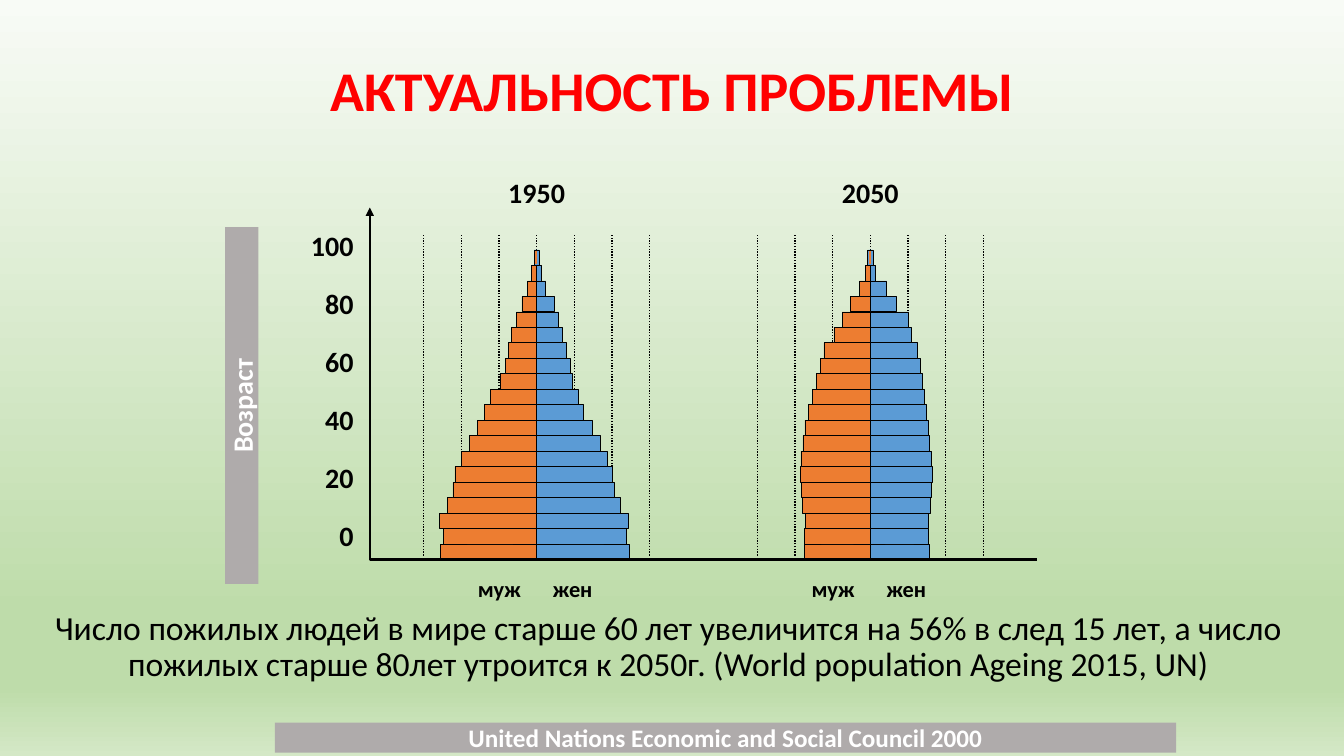
from lxml.etree import SubElement
from pptx import Presentation
from pptx.dml.color import RGBColor
from pptx.enum.dml import MSO_LINE
from pptx.enum.shapes import MSO_CONNECTOR, MSO_SHAPE
from pptx.enum.text import MSO_ANCHOR, PP_ALIGN
from pptx.oxml.ns import qn
from pptx.util import Cm, Pt

TITLE = "АКТУАЛЬНОСТЬ ПРОБЛЕМЫ"
SUMMARY = ("Число пожилых людей в мире старше 60 лет увеличится на 56% в след 15 лет, "
           "а число пожилых старше 80лет утроится к 2050г. "
           "(World population Ageing 2015, UN)")
SOURCE = "United Nations Economic and Social Council 2000"
AGE_AXIS = "Возраст"
AGES = ["100", "80", "60", "40", "20", "0"]
MEN, WOMEN = "муж", "жен"
PYRAMIDS = [
    {"year": "1950",
     "men": [2.43, 2.34, 2.44, 2.24, 2.11, 2.06, 1.9, 1.7, 1.5, 1.32,
             1.17, 0.91, 0.79, 0.71, 0.64, 0.51, 0.37, 0.23, 0.13],
     "women": [2.34, 2.26, 2.31, 2.11, 1.96, 1.9, 1.78, 1.6, 1.4, 1.19,
               1.04, 0.91, 0.84, 0.74, 0.66, 0.56, 0.45, 0.23, 0.13]},
    {"year": "2050",
     "men": [1.66, 1.67, 1.64, 1.71, 1.74, 1.76, 1.75, 1.7, 1.65, 1.57,
             1.45, 1.37, 1.25, 1.17, 0.92, 0.71, 0.51, 0.28, 0.13],
     "women": [1.5, 1.47, 1.47, 1.52, 1.55, 1.57, 1.55, 1.5, 1.47, 1.42,
               1.37, 1.32, 1.27, 1.19, 1.04, 0.97, 0.66, 0.41, 0.13]},
]
BACKGROUND = [(0, "F8FBF6"), (81, "BEDCAA"), (91, "BEDCAA"), (100, "D4E8C6")]

BLACK = RGBColor(0x00, 0x00, 0x00)
WHITE = RGBColor(0xFF, 0xFF, 0xFF)
RED = RGBColor(0xFF, 0x00, 0x00)
GRAY = RGBColor(0xAF, 0xAB, 0xAB)
ORANGE = RGBColor(0xED, 0x7D, 0x31)
BLUE = RGBColor(0x5B, 0x9B, 0xD5)

AXIS_LEFT, AXIS_TOP, AXIS_BOTTOM = 9.32, 5.23, 14.1
PANEL_WIDTH = 8.41
BAR_HEIGHT = 0.39
TIP_WIDTH = 0.13
GRID_STEP, GRID_TOP, GRID_BOTTOM = 0.95, 5.92, 14

prs = Presentation()
prs.slide_width, prs.slide_height = Cm(33.87), Cm(19.05)
slide = prs.slides.add_slide(prs.slide_layouts[6])
shapes = slide.shapes


def paint_background():
    fill = slide.background.fill
    fill.gradient()
    fill.gradient_angle = 270
    stops = next(slide.element.iter(qn("a:gsLst")))
    for stop in list(stops):
        stops.remove(stop)
    for percent, color in BACKGROUND:
        stop = SubElement(stops, qn("a:gs"), pos=str(percent * 1000))
        SubElement(stop, qn("a:srgbClr"), val=color)


def write(shape, lines, size, color=BLACK, bold=True, align=PP_ALIGN.CENTER,
          anchor=MSO_ANCHOR.TOP, insets=(0, 0), spacing=None, gap=0):
    frame = shape.text_frame
    frame.word_wrap = True
    frame.vertical_anchor = anchor
    frame.margin_left = frame.margin_right = Cm(insets[0])
    frame.margin_top = frame.margin_bottom = Cm(insets[1])
    for index, line in enumerate(lines):
        paragraph = frame.add_paragraph() if index else frame.paragraphs[0]
        paragraph.alignment = align
        paragraph.line_spacing = spacing
        paragraph.space_before = Pt(gap if index else 0)
        run = paragraph.add_run()
        run.text = line
        run.font.name, run.font.size, run.font.bold = "Calibri", Pt(size), bold
        run.font.color.rgb = color


def text_box(left, top, width, height, lines, size, **style):
    write(shapes.add_textbox(Cm(left), Cm(top), Cm(width), Cm(height)), lines, size, **style)


def rectangle(left, top, width, height, color, outlined=False):
    shape = shapes.add_shape(MSO_SHAPE.RECTANGLE, Cm(left), Cm(top), Cm(width), Cm(height))
    shape.shadow.inherit = False
    shape.fill.solid()
    shape.fill.fore_color.rgb = color
    if outlined:
        shape.line.color.rgb = BLACK
        shape.line.width = Pt(0.5)
    else:
        shape.line.fill.background()
    return shape


def vertical_line(x, top, bottom, color, width, dash=None):
    line = shapes.add_connector(MSO_CONNECTOR.STRAIGHT, Cm(x), Cm(bottom), Cm(x), Cm(top))
    line.line.color.rgb = color
    line.line.width = Pt(width)
    line.line.dash_style = dash
    SubElement(line.element.spPr, qn("a:effectLst"))


def draw_axes():
    builder = shapes.build_freeform(Cm(AXIS_LEFT), Cm(AXIS_TOP))
    right = AXIS_LEFT + len(PYRAMIDS) * PANEL_WIDTH
    builder.add_line_segments(
        [(Cm(AXIS_LEFT), Cm(AXIS_BOTTOM)), (Cm(right), Cm(AXIS_BOTTOM))], close=False)
    axes = builder.convert_to_shape()
    axes.shadow.inherit = False
    axes.fill.background()
    axes.line.color.rgb = BLACK
    axes.line.width = Pt(1.5)
    SubElement(axes.line._get_or_add_ln(), qn("a:headEnd"), type="triangle")


def draw_pyramid(panel, pyramid):
    left = AXIS_LEFT + panel * PANEL_WIDTH
    center = left + PANEL_WIDTH / 2
    for step in range(-3, 4):
        vertical_line(center + step * GRID_STEP, GRID_TOP, GRID_BOTTOM, BLACK, 1,
                      MSO_LINE.ROUND_DOT)
    text_box(left, 4.42, PANEL_WIDTH, 0.84, [pyramid["year"]], 20)
    text_box(center - 2.79, 14.5, 2.39, 0.66, [MEN], 16,
             align=PP_ALIGN.RIGHT, anchor=MSO_ANCHOR.BOTTOM)
    text_box(center + 0.41, 14.5, 2.59, 0.66, [WOMEN], 16,
             align=PP_ALIGN.LEFT, anchor=MSO_ANCHOR.BOTTOM)
    top = AXIS_BOTTOM
    for men, women in zip(pyramid["men"], pyramid["women"]):
        top -= BAR_HEIGHT
        rectangle(center - men, top, men, BAR_HEIGHT, ORANGE, outlined=True)
        rectangle(center, top, women, BAR_HEIGHT, BLUE, outlined=True)
    top -= BAR_HEIGHT
    rectangle(center - TIP_WIDTH / 2, top, TIP_WIDTH, BAR_HEIGHT, BLUE, outlined=True)
    vertical_line(center - 0.02, top + 0.03, top + BAR_HEIGHT - 0.03, ORANGE, 1.5)


paint_background()
write(rectangle(6.93, 18.21, 22.71, 0.76, GRAY), [SOURCE], 18, color=WHITE)
age_band = rectangle(1.6, 9.8, 8.99, 0.84, GRAY)
age_band.rotation = 270
write(age_band, [AGE_AXIS], 20, color=WHITE, anchor=MSO_ANCHOR.BOTTOM)
text_box(7.72, 5.77, 1.19, 8.71, AGES, 20, align=PP_ALIGN.RIGHT, gap=17.4)
for panel, pyramid in enumerate(PYRAMIDS):
    draw_pyramid(panel, pyramid)
draw_axes()
text_box(4.23, 0.99, 25.4, 2.26, [TITLE], 40, color=RED,
         anchor=MSO_ANCHOR.BOTTOM, insets=(0.25, 0.13), spacing=0.9)
text_box(0.74, 15.27, 32.21, 2.92, [SUMMARY], 24, bold=False,
         insets=(0.25, 0.13), spacing=0.9)

prs.save("out.pptx")
